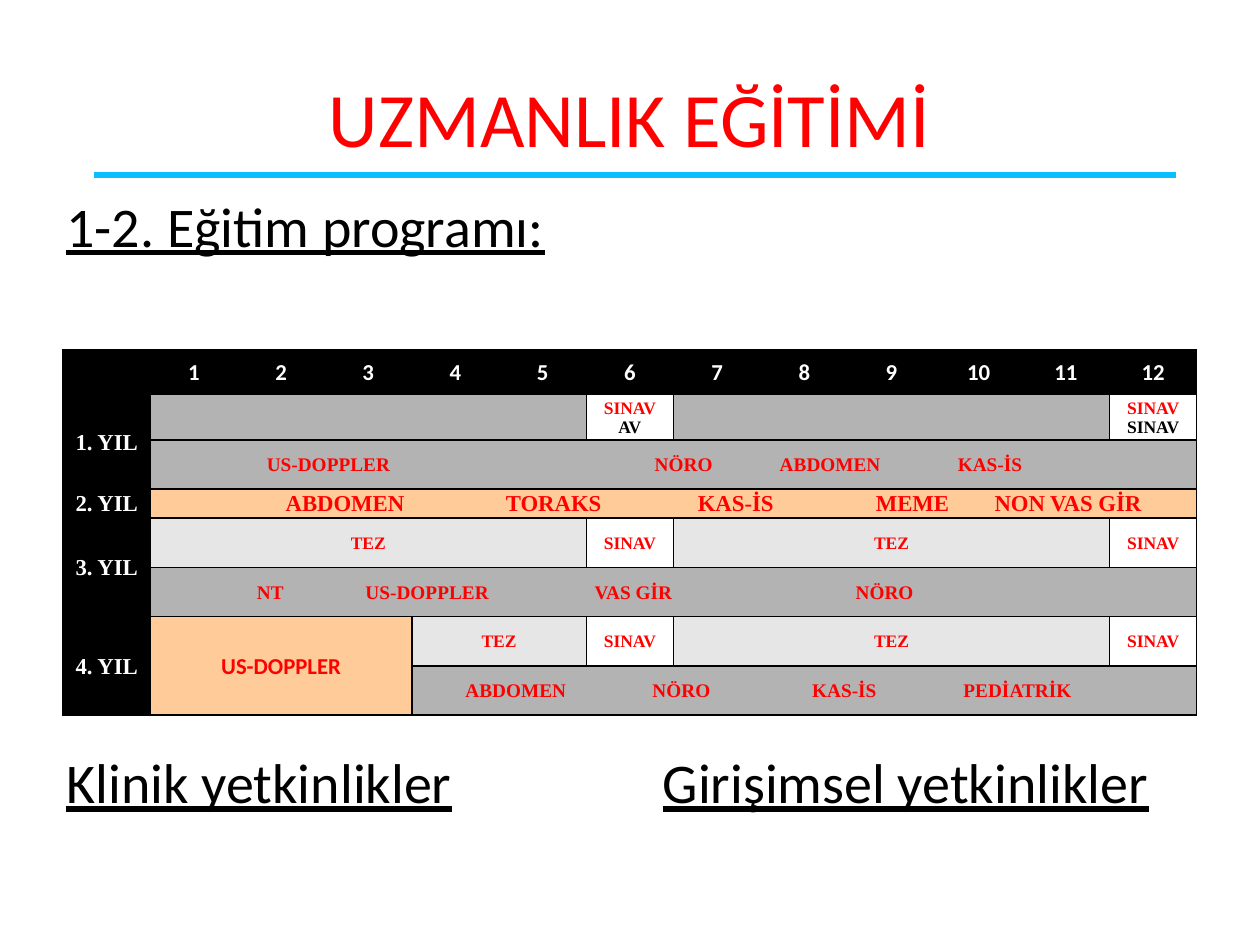
from lxml import etree
from pptx import Presentation
from pptx import util as u
from pptx.dml.color import RGBColor
from pptx.enum import shapes, text
from pptx.oxml.ns import qn

BLACK = RGBColor(0x00, 0x00, 0x00)
WHITE = RGBColor(0xFF, 0xFF, 0xFF)
RED = RGBColor(0xFF, 0x00, 0x00)
SKY = RGBColor(0x09, 0xBF, 0xFF)
GREY = RGBColor(0xB3, 0xB3, 0xB3)
PALE = RGBColor(0xE6, 0xE6, 0xE6)
PEACH = RGBColor(0xFF, 0xCC, 0x99)
SANS, SERIF = "Calibri", "Times New Roman"

# Content: headings as (text, left, top, width) in cm
TITLE = "UZMANLIK EĞİTİMİ"
HEADINGS = [
    ("1-2. Eğitim programı:", 1.09, 3.73, 12.19),
    ("Klinik yetkinlikler", 1.09, 14.94, 9.6),
    ("Girişimsel yetkinlikler", 13.11, 14.94, 11.61),
]
COLUMN = 22.86 / 13
ROW_HEIGHTS = [0.9, 0.92, 0.99, 0.57, 1, 0.99, 0.99, 0.99]
YEARS = [("1. YIL", 1, 2), ("2. YIL", 3, 1), ("3. YIL", 4, 2), ("4. YIL", 6, 2)]

# Exams: (row, column, second line)
EXAMS = [(1, 6, "AV"), (1, 12, "SINAV"), (4, 6, ""), (4, 12, ""), (6, 6, ""), (6, 12, "")]

# Blocks: (text, row, column, rows, columns, fill, size, font)
BLOCKS = [
    ("", 1, 1, 1, 5, GREY, 10, SERIF),
    ("", 1, 7, 1, 5, GREY, 10, SERIF),
    ("TEZ", 4, 1, 1, 5, PALE, 10, SERIF),
    ("TEZ", 4, 7, 1, 5, PALE, 10, SERIF),
    ("US-DOPPLER", 6, 1, 2, 3, PEACH, 13, SANS),
    ("TEZ", 6, 4, 1, 2, PALE, 10, SERIF),
    ("TEZ", 6, 7, 1, 5, PALE, 10, SERIF),
]

# Rotations: (row, column, columns, fill, size, [(name, tab stop in cm)])
ROTATIONS = [
    (2, 1, 12, GREY, 11,
     [("US-DOPPLER", 2.32), ("NÖRO", 10.14), ("ABDOMEN", 12.66), ("KAS-İS", 16.25)]),
    (3, 1, 12, PEACH, 13,
     [("ABDOMEN", 2.7), ("TORAKS", 7.14), ("KAS-İS", 11.01), ("MEME", 14.6),
      ("NON VAS GİR", 16.99)]),
    (5, 1, 12, GREY, 11,
     [("NT", 2.12), ("US-DOPPLER", 4.31), ("VAS GİR", 8.93), ("NÖRO", 14.19)]),
    (7, 4, 9, GREY, 11,
     [("ABDOMEN", 1.05), ("NÖRO", 4.82), ("KAS-İS", 8.04), ("PEDİATRİK", 11.09)]),
]


def write(para, words, size, color, font=SANS, bold=False, underline=False,
          align=text.PP_ALIGN.LEFT, stops=()):
    para.alignment = align
    if stops:
        tabs = etree.SubElement(para._p.get_or_add_pPr(), qn("a:tabLst"))
        for stop in stops:
            etree.SubElement(tabs, qn("a:tab"), pos=str(u.Cm(stop)), algn="l")
    span = para.add_run()
    span.text = words
    span.font.name, span.font.size = font, u.Pt(size)
    span.font.color.rgb = color
    span.font.bold, span.font.underline = bold, underline


def add_box(page, words, left, top, width, height, anchor=text.MSO_ANCHOR.TOP, **style):
    box = page.shapes.add_textbox(u.Cm(left), u.Cm(top), u.Cm(width), u.Cm(height))
    box.text_frame.word_wrap = True
    box.text_frame.vertical_anchor = anchor
    write(box.text_frame.paragraphs[0], words, **style)


def style_cell(cell):
    cell.margin_left = cell.margin_right = cell.margin_top = u.Cm(0.03)
    cell.margin_bottom = 0
    cell.vertical_anchor = text.MSO_ANCHOR.MIDDLE
    for side in ("a:lnL", "a:lnR", "a:lnT", "a:lnB"):
        line = etree.SubElement(cell._tc.get_or_add_tcPr(), qn(side), w=str(u.Pt(1)))
        paint = etree.SubElement(line, qn("a:solidFill"))
        etree.SubElement(paint, qn("a:srgbClr"), val=str(BLACK))
    cell.fill.solid()
    cell.fill.fore_color.rgb = BLACK


def fill_cell(table, row, column, rows, columns, fill, lines, size,
              align=text.PP_ALIGN.CENTER, **style):
    """Merge a block of cells, colour it and write its (text, colour) lines."""
    cell = table.cell(row, column)
    if rows * columns > 1:
        cell.merge(table.cell(row + rows - 1, column + columns - 1))
    cell.fill.fore_color.rgb = fill
    for number, (words, color) in enumerate(lines):
        frame = cell.text_frame
        para = frame.add_paragraph() if number else frame.paragraphs[0]
        write(para, words, size, color, bold=True, align=align, **style)


def add_schedule(page):
    height = sum(ROW_HEIGHTS)
    frame = page.shapes.add_table(len(ROW_HEIGHTS), 13, u.Cm(1.27), u.Cm(7.05),
                                  u.Cm(COLUMN * 13), u.Cm(height))
    table = frame.table
    for column in table.columns:
        column.width = u.Cm(COLUMN)
    for row, row_height in zip(table.rows, ROW_HEIGHTS):
        row.height = u.Cm(row_height)
    for cell in table.iter_cells():
        style_cell(cell)

    # Months and years
    for month in range(1, 13):
        fill_cell(table, 0, month, 1, 1, BLACK, [(str(month), WHITE)], 13)
    for year, row, rows in YEARS:
        fill_cell(table, row, 0, rows, 1, BLACK, [(year, WHITE)], 13, font=SERIF)

    # Exams, thesis blocks and rotations
    for row, column, second in EXAMS:
        lines = [("SINAV", RED)] + ([(second, BLACK)] if second else [])
        fill_cell(table, row, column, 1, 1, WHITE, lines, 10, font=SERIF)
    for words, row, column, rows, columns, fill, size, font in BLOCKS:
        lines = [(words, RED)] if words else []
        fill_cell(table, row, column, rows, columns, fill, lines, size, font=font)
    for row, column, columns, fill, size, items in ROTATIONS:
        words = "".join("\t" + name for name, _ in items)
        fill_cell(table, row, column, 1, columns, fill, [(words, RED)], size,
                  align=text.PP_ALIGN.LEFT, font=SERIF, stops=[stop for _, stop in items])

    # Empty cells keep a small line height
    for cell in table.iter_cells():
        if not cell.text_frame.text:
            para = cell.text_frame.paragraphs[0]
            etree.SubElement(para._p, qn("a:endParaRPr"), sz="1000")


def main():
    deck = Presentation()
    deck.slide_width, deck.slide_height = u.Cm(25.4), u.Cm(19.05)
    page = deck.slides.add_slide(deck.slide_layouts[6])

    # Title and its rule
    rule = page.shapes.add_connector(shapes.MSO_CONNECTOR.STRAIGHT,
                                     u.Cm(1.9), u.Cm(3.53), u.Cm(23.7), u.Cm(3.53))
    rule.line.color.rgb = SKY
    rule.line.width = u.Pt(3)
    etree.SubElement(rule._element.spPr, qn("a:effectLst"))
    add_box(page, TITLE, 1.27, 0.76, 22.86, 3.18, anchor=text.MSO_ANCHOR.MIDDLE,
            size=44, color=RED, align=text.PP_ALIGN.CENTER)

    # Schedule and headings
    add_schedule(page)
    for words, left, top, width in HEADINGS:
        add_box(page, words, left, top, width, 1.63, size=32, color=BLACK, underline=True)

    deck.save("out.pptx")


if __name__ == "__main__":
    main()
